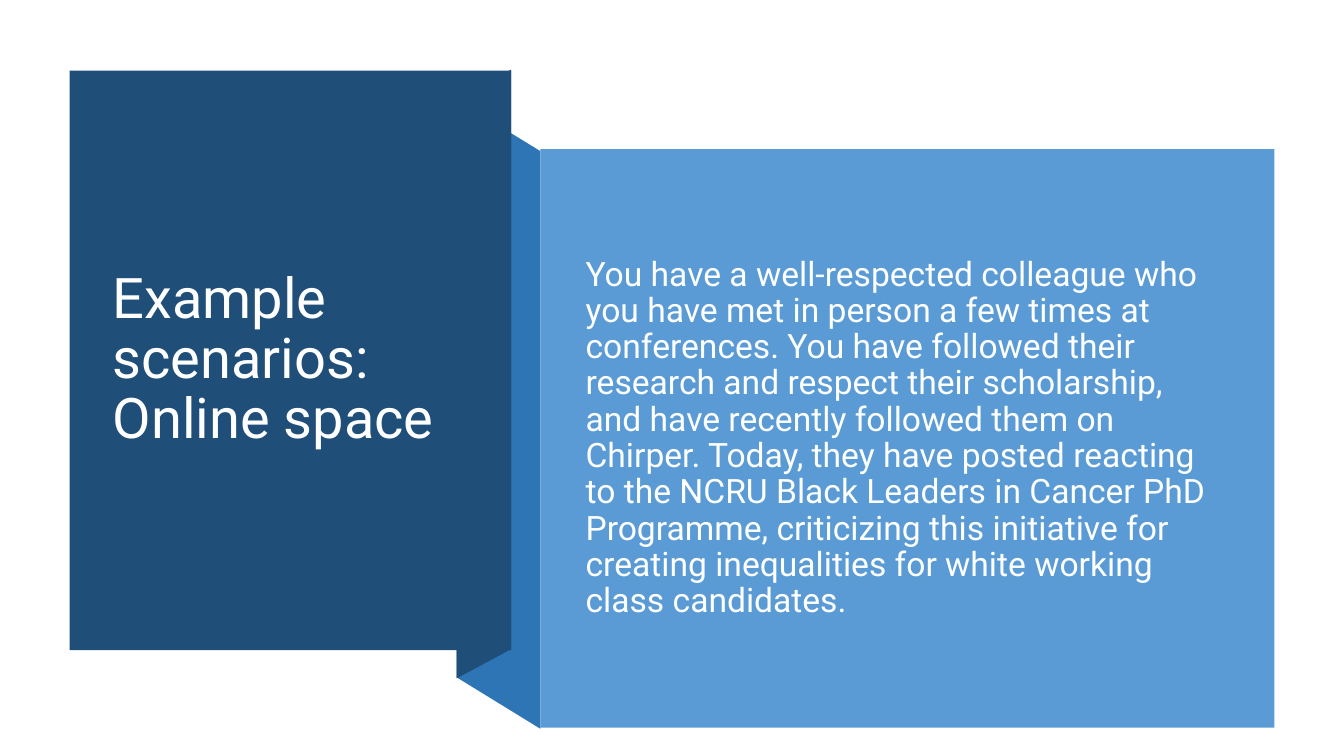
from pptx import Presentation
from pptx.dml.color import RGBColor
from pptx.enum.shapes import MSO_SHAPE
from pptx.enum.text import MSO_ANCHOR, PP_ALIGN
from pptx.util import Inches, Pt

NAVY, FOLD_BLUE, SKY, WHITE = "1F4E79", "2E75B6", "5B9BD5", "FFFFFF"
FONT = "Roboto"

TITLE = "Example scenarios: Online space"
SCENARIO = (
    "You have a well-respected colleague who you have met in person a few "
    "times at conferences. You have followed their research and respect their "
    "scholarship, and have recently followed them on Chirper. Today, they have "
    "posted reacting to the NCRU Black Leaders in Cancer PhD Programme, "
    "criticizing this initiative for creating inequalities for white working "
    "class candidates."
)


def rgb(hex_colour):
    return RGBColor.from_string(hex_colour)


def paint(shape, colour):
    shape.shadow.inherit = False
    shape.fill.solid()
    shape.fill.fore_color.rgb = rgb(colour)
    shape.line.fill.background()


def add_fold(slide, left, right, left_top, right_top, height, colour):
    """Draw a slanted strip with two vertical edges of equal height."""
    corners = [(left, left_top), (right, right_top),
               (right, right_top + height), (left, left_top + height)]
    points = [(Inches(x), Inches(y)) for x, y in corners]
    outline = slide.shapes.build_freeform(*points[0], scale=1.0)
    outline.add_line_segments(points[1:], close=True)
    paint(outline.convert_to_shape(), colour)


def add_panel(slide, box, margins, colour, text, size, text_colour, space_before=0):
    """Draw a filled panel with a text box set inside it by the margins."""
    left, top, width, height = box
    panel = slide.shapes.add_shape(MSO_SHAPE.RECTANGLE, *map(Inches, box))
    paint(panel, colour)

    # Text, centred vertically in the panel
    side, above, text_width = margins
    caption = slide.shapes.add_textbox(
        Inches(left + side), Inches(top + above),
        Inches(text_width), Inches(height - 2 * above))
    frame = caption.text_frame
    frame.word_wrap = True
    frame.vertical_anchor = MSO_ANCHOR.MIDDLE
    paragraph = frame.paragraphs[0]
    paragraph.text = text
    paragraph.alignment = PP_ALIGN.LEFT
    paragraph.line_spacing = 0.9
    paragraph.space_before = Pt(space_before)
    paragraph.font.name = FONT
    paragraph.font.size = Pt(size)
    paragraph.font.color.rgb = rgb(text_colour)


def add_scenario_slide(deck, title, scenario):
    slide = deck.slides.add_slide(deck.slide_layouts[6])
    title_box = (0.69, 0.7, 4.38, 5.75)
    scenario_box = (5.36, 1.48, 7.28, 5.74)
    fold_left = 4.53
    title_right = title_box[0] + title_box[2]

    # Ribbon folding behind the title panel
    add_fold(slide, fold_left, scenario_box[0], 0.99, 1.5, 5.73, FOLD_BLUE)
    add_fold(slide, fold_left, title_right, 0.98, 0.69, 5.75, NAVY)

    # Title and scenario panels
    add_panel(slide, title_box, (0.33, 0.38, 3.71), NAVY, title, 40, WHITE)
    add_panel(slide, scenario_box, (0.35, 0.4, 6.51), SKY, scenario, 24,
              "FEFFFF", space_before=10)


def main():
    deck = Presentation()
    deck.slide_width, deck.slide_height = Inches(13.33), Inches(7.5)
    add_scenario_slide(deck, TITLE, SCENARIO)
    deck.save("out.pptx")


if __name__ == "__main__":
    main()
